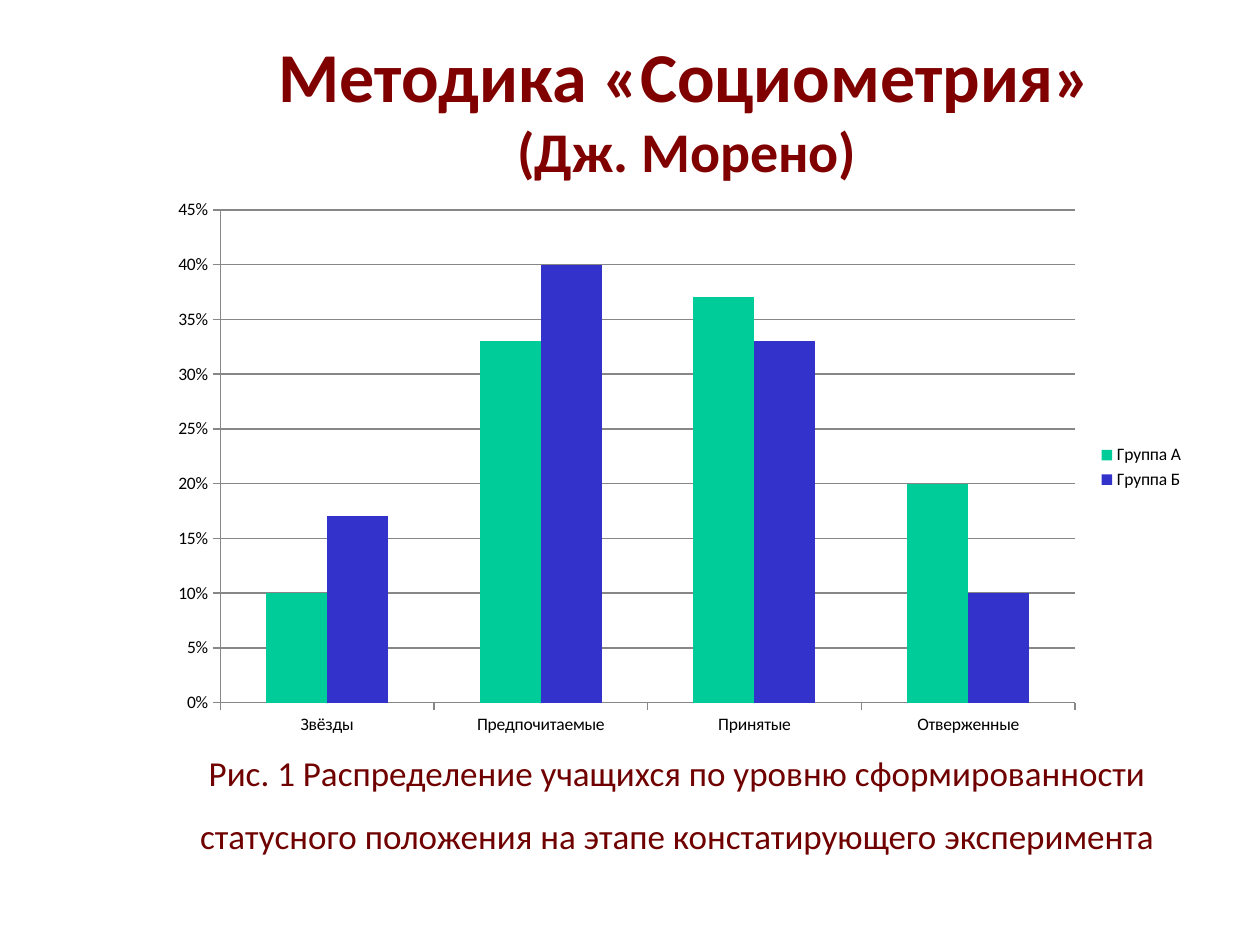
import pptx
import pptx.chart.data
import pptx.dml.color
import pptx.enum.chart
import pptx.enum.text
import pptx.util
from pptx.util import Inches

RGBColor = pptx.dml.color.RGBColor
MAROON = RGBColor(0x80, 0x00, 0x00)
DARK_MAROON = RGBColor(0x70, 0x00, 0x00)
BLACK = RGBColor(0x00, 0x00, 0x00)
GRAY = RGBColor(0x87, 0x87, 0x87)
GREEN = RGBColor(0x00, 0xCC, 0x99)
BLUE = RGBColor(0x33, 0x33, 0xCC)

CATEGORIES = ["Звёзды", "Предпочитаемые", "Принятые", "Отверженные"]
GROUPS = [
    ("Группа А", [0.10, 0.33, 0.37, 0.20], GREEN),
    ("Группа Б", [0.17, 0.40, 0.33, 0.10], BLUE),
]


class SlideBuilder:
    font_name = "Calibri"

    def __init__(self, slide):
        self.slide = slide

    def style_font(self, font, size, color, bold=False):
        font.name = self.font_name
        font.size = pptx.util.Pt(size)
        font.color.rgb = color
        font.bold = bold

    def text(self, area, content, sizes, color, bold=False, bottom=False):
        """Add a centred paragraph; each line of content takes its own size."""
        frame = self.slide.shapes.add_textbox(*area).text_frame
        frame.word_wrap = True
        if bottom:
            frame.vertical_anchor = pptx.enum.text.MSO_ANCHOR.BOTTOM
        para = frame.paragraphs[0]
        para.text = content
        para.alignment = pptx.enum.text.PP_ALIGN.CENTER
        for span, size in zip(para.runs, sizes):
            self.style_font(span.font, size, color, bold)
        return para

    def column_chart(self, area, categories, groups):
        data = pptx.chart.data.CategoryChartData(number_format="0%")
        data.categories = categories
        for name, values, _ in groups:
            data.add_series(name, values)
        kind = pptx.enum.chart.XL_CHART_TYPE.COLUMN_CLUSTERED
        chart = self.slide.shapes.add_chart(kind, *area, data).chart
        self.style_font(chart.font, 10, BLACK)
        chart.has_title = False
        chart.has_legend = True
        chart.legend.position = pptx.enum.chart.XL_LEGEND_POSITION.RIGHT
        chart.legend.include_in_layout = False

        plot = chart.plots[0]
        plot.gap_width = 150
        plot.overlap = 0
        plot.vary_by_categories = False
        for series, (_, _, color) in zip(plot.series, groups):
            series.format.fill.solid()
            series.format.fill.fore_color.rgb = color
            series.invert_if_negative = False

        value_axis = chart.value_axis
        value_axis.minimum_scale = 0
        value_axis.maximum_scale = 0.45
        value_axis.major_unit = 0.05
        value_axis.has_major_gridlines = True
        value_axis.tick_labels.number_format = "0%"
        value_axis.tick_labels.number_format_is_linked = False
        for axis in (chart.category_axis, value_axis):
            axis.major_tick_mark = pptx.enum.chart.XL_TICK_MARK.OUTSIDE
        for part in (chart.category_axis, value_axis, value_axis.major_gridlines):
            part.format.line.color.rgb = GRAY
            part.format.line.width = pptx.util.Pt(0.75)


def main():
    deck = pptx.Presentation()
    deck.slide_width = Inches(10)
    deck.slide_height = Inches(7.5)
    builder = SlideBuilder(deck.slides.add_slide(deck.slide_layouts[6]))

    builder.text(
        (Inches(1.25), Inches(0), Inches(8.5), Inches(1.51)),
        "Методика «Социометрия» \v(Дж. Морено) ",
        [40, 32], MAROON, bold=True, bottom=True,
    )
    caption = builder.text(
        (Inches(1.25), Inches(5.75), Inches(8.25), Inches(1.11)),
        "Рис. 1 Распределение учащихся по уровню сформированности "
        "статусного положения на этапе констатирующего эксперимента",
        [20], DARK_MAROON,
    )
    caption.line_spacing = 1.5
    caption.space_after = pptx.util.Pt(10)
    builder.column_chart(
        (Inches(1.25), Inches(1.5), Inches(8.25), Inches(4.42)),
        CATEGORIES, GROUPS,
    )
    deck.save("out.pptx")


if __name__ == "__main__":
    main()
